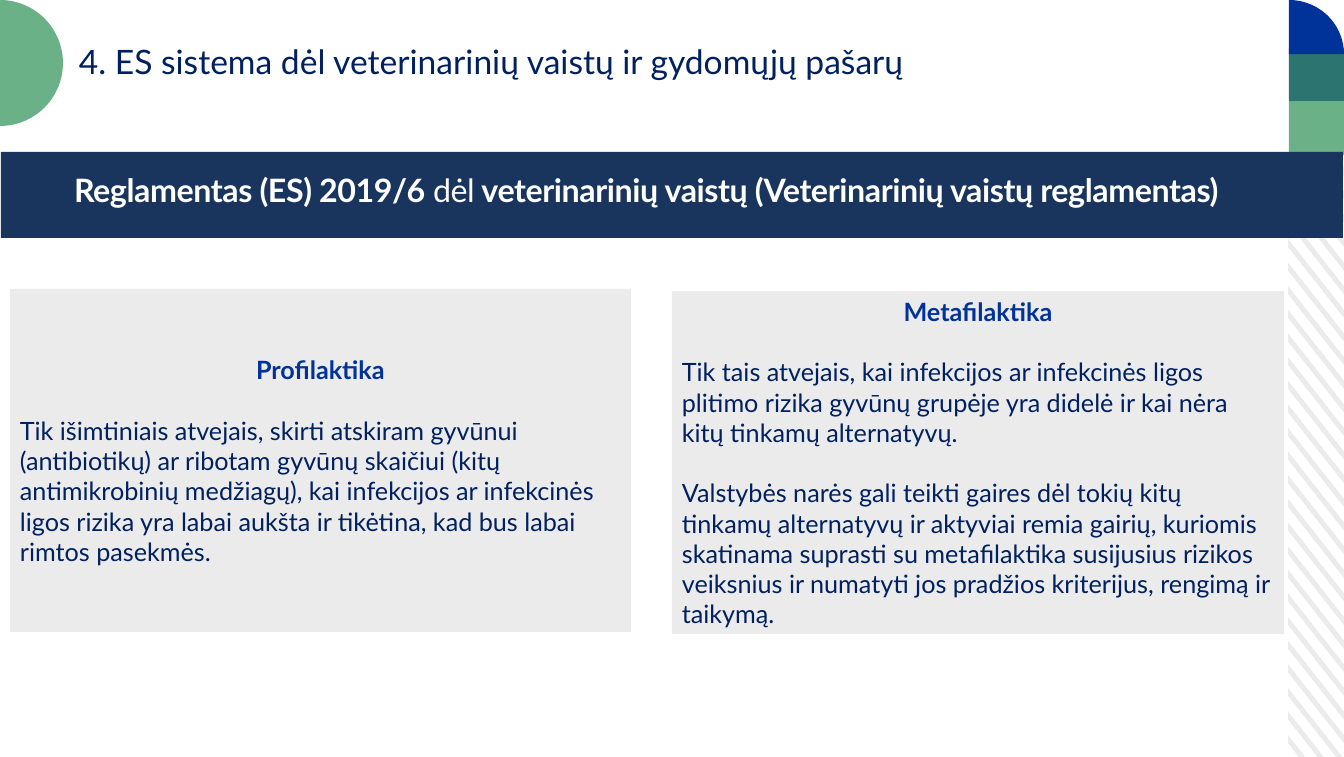
import math

import lxml.etree
import pptx
import pptx.dml.color
import pptx.enum.shapes
import pptx.enum.text
import pptx.util

TITLE = "4. ES sistema dėl veterinarinių vaistų ir gydomųjų pašarų"
REGULATION = [
    ("Reglamentas (ES) 2019/6 ", True),
    ("dėl", False),
    (" veterinarinių vaistų (Veterinarinių vaistų reglamentas)", True),
]
PANELS = [
    ((10, 289, 621, 343), "Profilaktika", [
        "Tik išimtiniais atvejais, skirti atskiram gyvūnui (antibiotikų) ar ribotam gyvūnų "
        "skaičiui (kitų antimikrobinių medžiagų), kai infekcijos ar infekcinės \v"
        "ligos rizika yra labai aukšta ir tikėtina, kad bus labai rimtos pasekmės.",
    ]),
    ((672, 291, 612, 343), "Metafilaktika", [
        "Tik tais atvejais, kai infekcijos ar infekcinės ligos plitimo rizika gyvūnų grupėje "
        "yra didelė ir kai nėra kitų tinkamų alternatyvų.",
        "Valstybės narės gali teikti gaires dėl tokių kitų tinkamų alternatyvų ir aktyviai remia "
        "gairių, kuriomis skatinama suprasti su metafilaktika susijusius rizikos veiksnius ir "
        "numatyti jos pradžios kriterijus, rengimą ir taikymą.",
    ]),
]
BLUE, NAVY, BANNER_BLUE = "003399", "002060", "19355D"
TEAL, GREEN, GREY, WHITE = "2C7470", "6BB188", "ECEBEB", "FFFFFF"
FONT = "Lato"
PX = 914400 / 100.8
WIDTH, HEIGHT = 1344, 757
STRIP_LEFT, STRIP_TOP = 1288, 155
STRIPE_START, STRIPE_STEP, STRIPE_THICKNESS, STRIPE_DROP = 168, 23.63, 8, 71


def emu(px):
    return round(px * PX)


def color(hex_code):
    return pptx.dml.color.RGBColor.from_string(hex_code)


def paint(shape, fill):
    shape.shadow.inherit = False
    shape.fill.solid()
    shape.fill.fore_color.rgb = color(fill)
    shape.line.fill.background()


def add_rectangle(box, fill):
    rectangle = slide.shapes.add_shape(
        pptx.enum.shapes.MSO_SHAPE.RECTANGLE, *map(emu, box))
    paint(rectangle, fill)
    return rectangle


def add_outline(contours, fill):
    contours = [[(emu(x), emu(y)) for x, y in contour] for contour in contours]
    builder = slide.shapes.build_freeform(*contours[0][0])
    for number, contour in enumerate(contours):
        if number:
            builder.move_to(*contour[0])
        builder.add_line_segments(contour[1:], close=True)
    paint(builder.convert_to_shape(), fill)


def sector(center_x, center_y, radius_x, radius_y, end_angle):
    angles = [math.radians(a) for a in range(-90, end_angle + 1, 3)]
    return [(center_x, center_y)] + [
        (center_x + radius_x * math.cos(a), center_y + radius_y * math.sin(a)) for a in angles]


def stripe_edge(start):
    slope = STRIPE_DROP / (WIDTH - STRIP_LEFT)
    first = max(start, STRIP_TOP)
    last = min(start + STRIPE_DROP, HEIGHT)
    return [(STRIP_LEFT + (y - start) / slope, y) for y in (first, last)]


def add_text_box(box):
    frame = slide.shapes.add_textbox(*map(emu, box)).text_frame
    frame.word_wrap = True
    return frame


def style(run, size, hex_code, bold=False):
    run.font.name = FONT
    run.font.size = pptx.util.Pt(size)
    run.font.bold = bold
    run.font.color.rgb = color(hex_code)


presentation = pptx.Presentation()
presentation.slide_width = emu(WIDTH)
presentation.slide_height = emu(HEIGHT)
slide = presentation.slides.add_slide(presentation.slide_layouts[6])

stripes = []
for index in range(-3, 25):
    upper = STRIPE_START + index * STRIPE_STEP
    stripes.append(stripe_edge(upper) + stripe_edge(upper + STRIPE_THICKNESS)[::-1])
add_outline(stripes, GREY)

add_rectangle((1289, 48, 55, 53), TEAL)
add_rectangle((1289, 101, 55, 54), GREEN)
add_outline([sector(1289, 54, 55, 54, 0)], BLUE)
add_outline([sector(0, 63, 63, 63, 90)], GREEN)

title = add_text_box((69, 36, 1223, 58))
title.text = TITLE
style(title.paragraphs[0].runs[0], 24, NAVY)

add_rectangle((1, 152, 1342, 86), BANNER_BLUE)
regulation = add_text_box((17, 165, 1259, 50)).paragraphs[0]
regulation.alignment = pptx.enum.text.PP_ALIGN.CENTER
for words, bold in REGULATION:
    run = regulation.add_run()
    run.text = words
    style(run, 23, WHITE, bold)
    run.font._element.set("spc", "-30")

for box, heading, passages in PANELS:
    panel = add_rectangle(box, GREY).text_frame
    panel.word_wrap = True
    panel.vertical_anchor = pptx.enum.text.MSO_ANCHOR.MIDDLE
    panel.text = heading
    panel.paragraphs[0].alignment = pptx.enum.text.PP_ALIGN.CENTER
    style(panel.paragraphs[0].runs[0], 18, BLUE, True)
    for passage in passages:
        paragraph = panel.add_paragraph()
        paragraph.text = passage
        paragraph.alignment = pptx.enum.text.PP_ALIGN.LEFT
        paragraph.space_before = pptx.util.Pt(21.6)
        for run in paragraph.runs:
            style(run, 18, NAVY)

presentation.save("out.pptx")
